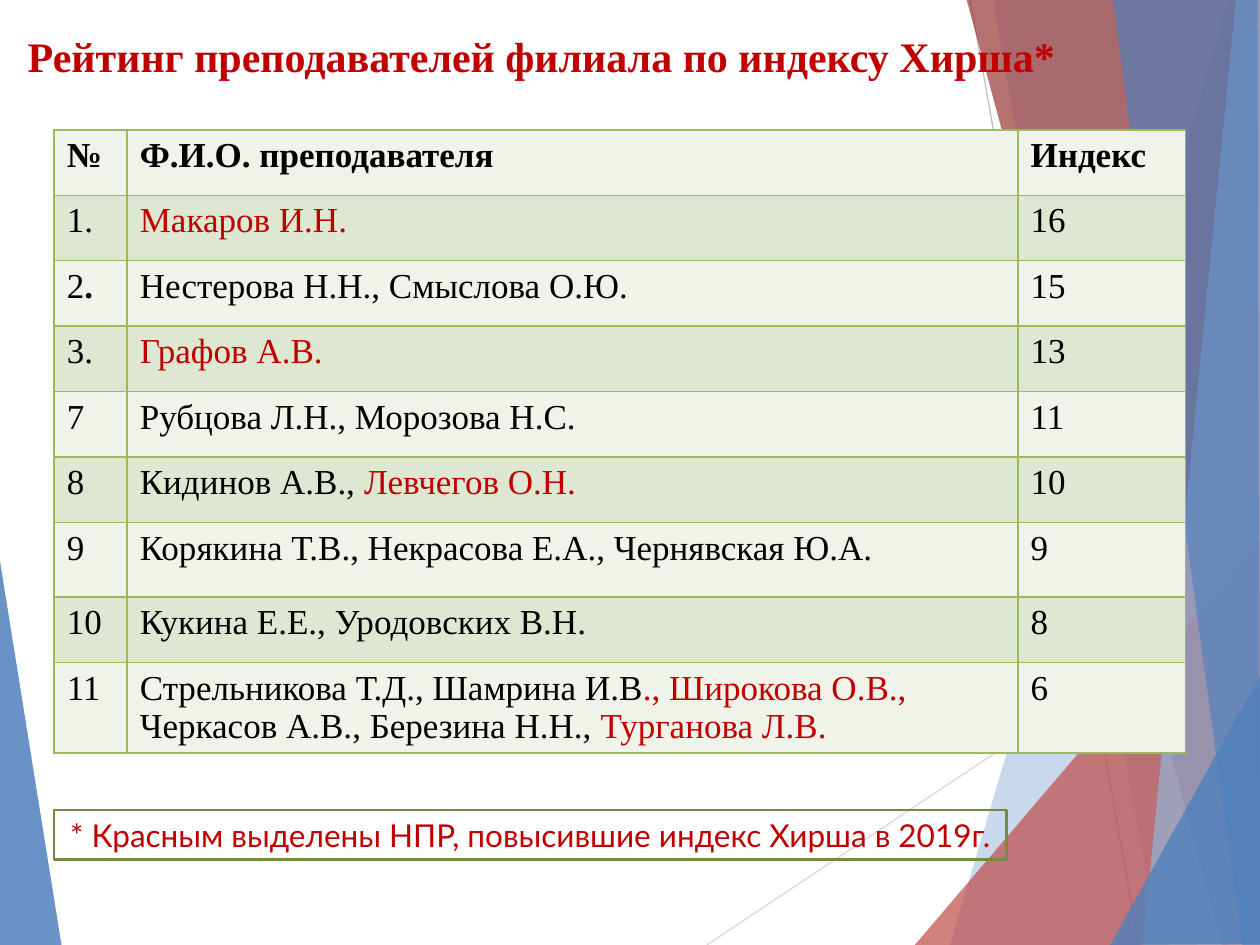
from typing import NamedTuple

from lxml import etree
from pptx import Presentation
from pptx.dml.color import RGBColor
from pptx.enum.shapes import MSO_CONNECTOR, MSO_SHAPE
from pptx.enum.text import MSO_ANCHOR, MSO_AUTO_SIZE, PP_ALIGN
from pptx.oxml.ns import qn
from pptx.util import Inches, Pt

STRAIGHT = MSO_CONNECTOR.STRAIGHT
RECTANGLE = MSO_SHAPE.RECTANGLE
TOP, MIDDLE = MSO_ANCHOR.TOP, MSO_ANCHOR.MIDDLE
LEFT, CENTER = PP_ALIGN.LEFT, PP_ALIGN.CENTER
NO_AUTOFIT = MSO_AUTO_SIZE.NONE

BLACK = RGBColor(0x00, 0x00, 0x00)
RED = RGBColor(0xC0, 0x00, 0x00)
BLUE = RGBColor(0x4F, 0x81, 0xBD)
LIGHT_BLUE = RGBColor(0x95, 0xB3, 0xD7)
BRICK = RGBColor(0xC0, 0x50, 0x4D)
DARK_BRICK = RGBColor(0x95, 0x37, 0x35)
GREEN = RGBColor(0x9B, 0xBB, 0x59)
DARK_GREEN = RGBColor(0x73, 0x8A, 0x42)
PALE_ROW = RGBColor(0xEF, 0xF3, 0xEA)
GREEN_ROW = RGBColor(0xDE, 0xE7, 0xD1)
LIGHT_GRAY = RGBColor(0xD9, 0xD9, 0xD9)
GRAY = RGBColor(0xBF, 0xBF, 0xBF)

SERIF, SANS = "Times New Roman", "Lato"


class Ray(NamedTuple):
    start: tuple[float, float]
    end: tuple[float, float]
    color: RGBColor


class Facet(NamedTuple):
    points: list[tuple[float, float]]
    color: RGBColor
    opacity: int


class Part(NamedTuple):
    text: str
    color: RGBColor = BLACK
    bold: bool = False


class Row(NamedTuple):
    number: list[Part]
    names: list[Part]
    index: list[Part]
    height: float = 0.52


LEFT_FACET = Facet([(-0.01, 4.39), (0.49, 7.51), (-0.01, 7.5)], BLUE, 85)
RAYS = [
    Ray((5.61, 7.5), (10.01, 4.57), LIGHT_GRAY),
    Ray((7.7, 0), (9.04, 7.5), GRAY),
]
RIGHT_FACETS = [
    Facet([(9.75, 0), (7.54, 7.5), (10.02, 7.51), (10.01, 0.01)], BLUE, 30),
    Facet([(7.88, -0.01), (9.19, 7.5), (10.01, 7.5), (10.01, -0.01)], BLUE, 20),
    Facet([(7.26, 7.5), (10, 4.29), (10.01, 7.5)], BRICK, 72),
    Facet([(7.67, -0.01), (9.7, 7.5), (10.01, 7.49), (10.01, -0.01)], DARK_BRICK, 70),
    Facet([(9.81, -0.01), (9.07, 7.5), (10.01, 7.5), (10, -0.01)], LIGHT_BLUE, 70),
    Facet([(8.83, -0.01), (9.86, 7.5), (10, 7.5), (9.98, -0.01)], BLUE, 65),
    Facet([(8.81, 7.5), (10.01, 5.35), (10.01, 7.49)], BLUE, 80),
]

COLUMN_WIDTHS = [0.58, 7.07, 1.33]
ROWS = [
    Row([Part("№", bold=True)], [Part("Ф.И.О. преподавателя", bold=True)],
        [Part("Индекс", bold=True)]),
    Row([Part("1.")], [Part("Макаров И.Н.", RED)], [Part("16")]),
    Row([Part("2"), Part(".", bold=True)], [Part("Нестерова Н.Н., Смыслова О.Ю.")],
        [Part("15")]),
    Row([Part("3.")], [Part("Графов А.В.", RED)], [Part("13")]),
    Row([Part("7")], [Part("Рубцова Л.Н., Морозова Н.С.")], [Part("11")]),
    Row([Part("8")], [Part("Кидинов А.В., "), Part("Левчегов О.Н.", RED)], [Part("10")]),
    Row([Part("9")], [Part("Корякина Т.В., Некрасова Е.А., Чернявская Ю.А.")],
        [Part("9")], 0.59),
    Row([Part("10")], [Part("Кукина Е.Е., Уродовских В.Н.")], [Part("8")]),
    Row([Part("11")],
        [Part("Стрельникова Т.Д., Шамрина И.В"), Part("., Широкова О.В., ", RED),
         Part("Черкасов А.В., Березина Н.Н., "), Part("Турганова Л.В.", RED)],
        [Part("6")], 0.72),
]


def set_values(target, values: dict) -> None:
    for name, value in values.items():
        setattr(target, name, value)


def add_parts(paragraph, parts: list[Part], font: str, size: int) -> None:
    for part in parts:
        run = paragraph.add_run()
        run.text = part.text
        set_values(run.font, {"name": font, "size": Pt(size), "bold": part.bold})
        run.font.color.rgb = part.color


def draw_facet(slide, facet: Facet) -> None:
    points = [(Inches(x), Inches(y)) for x, y in facet.points]
    builder = slide.shapes.build_freeform(*points[0])
    builder.add_line_segments(points[1:], close=True)
    shape = builder.convert_to_shape()
    shape.shadow.inherit = False
    shape.line.fill.background()
    shape.fill.solid()
    shape.fill.fore_color.rgb = facet.color
    color = shape.fill._xPr.find(qn("a:solidFill"))[0]
    etree.SubElement(color, qn("a:alpha"), val=str(facet.opacity * 1000))


def draw_ray(slide, ray: Ray) -> None:
    ends = [Inches(value) for value in (*ray.start, *ray.end)]
    connector = slide.shapes.add_connector(STRAIGHT, *ends)
    connector.line.color.rgb = ray.color
    connector.line.width = Pt(0.75)
    etree.SubElement(connector._element.spPr, qn("a:effectLst"))


def add_borders(cell) -> None:
    properties = cell._tc.get_or_add_tcPr()
    for position, side in enumerate(("a:lnL", "a:lnR", "a:lnT", "a:lnB")):
        border = etree.Element(qn(side), w=str(Pt(1)))
        fill = etree.SubElement(border, qn("a:solidFill"))
        etree.SubElement(fill, qn("a:srgbClr"), val=str(GREEN))
        properties.insert(position, border)


def draw_rating_table(slide) -> None:
    width, height = sum(COLUMN_WIDTHS), sum(row.height for row in ROWS)
    frame = slide.shapes.add_table(len(ROWS), len(COLUMN_WIDTHS), Inches(0.43),
                                   Inches(1.03), Inches(width), Inches(height))
    table = frame.table
    for column, column_width in zip(table.columns, COLUMN_WIDTHS):
        column.width = Inches(column_width)
    for row_number, row in enumerate(ROWS):
        table.rows[row_number].height = Inches(row.height)
        for column_number, parts in enumerate((row.number, row.names, row.index)):
            cell = table.cell(row_number, column_number)
            cell.fill.solid()
            cell.fill.fore_color.rgb = GREEN_ROW if row_number % 2 else PALE_ROW
            add_borders(cell)
            add_parts(cell.text_frame.paragraphs[0], parts, SERIF, 20)


def place_title(slide) -> None:
    title = slide.shapes.title
    set_values(title, {"left": Inches(0.12), "top": Inches(0.19),
                       "width": Inches(8.74), "height": Inches(0.8)})
    set_values(title.text_frame, {"vertical_anchor": TOP, "word_wrap": True,
                                  "auto_size": NO_AUTOFIT})
    paragraph = title.text_frame.paragraphs[0]
    paragraph.alignment = LEFT
    add_parts(paragraph, [Part("Рейтинг преподавателей филиала по индексу Хирша*", RED, True)],
              SERIF, 24)
    slide.shapes._spTree.append(title._element)  # in front of the facets


def draw_footnote(slide) -> None:
    box = slide.shapes.add_shape(RECTANGLE, Inches(0.43), Inches(6.43),
                                 Inches(7.56), Inches(0.39))
    box.shadow.inherit = False
    box.fill.background()
    box.line.color.rgb = DARK_GREEN
    box.line.width = Pt(1.5)
    set_values(box.text_frame, {"vertical_anchor": MIDDLE, "word_wrap": True})
    paragraph = box.text_frame.paragraphs[0]
    paragraph.alignment = CENTER
    note = "* Красным выделены НПР, повысившие индекс Хирша в 2019г. "
    add_parts(paragraph, [Part(note, RED)], SANS, 18)


def main() -> None:
    presentation = Presentation()
    set_values(presentation, {"slide_width": Inches(10), "slide_height": Inches(7.5)})
    slide = presentation.slides.add_slide(presentation.slide_layouts[5])
    draw_facet(slide, LEFT_FACET)
    for ray in RAYS:
        draw_ray(slide, ray)
    for facet in RIGHT_FACETS:
        draw_facet(slide, facet)
    place_title(slide)
    draw_rating_table(slide)
    draw_footnote(slide)
    presentation.save("out.pptx")


if __name__ == "__main__":
    main()
